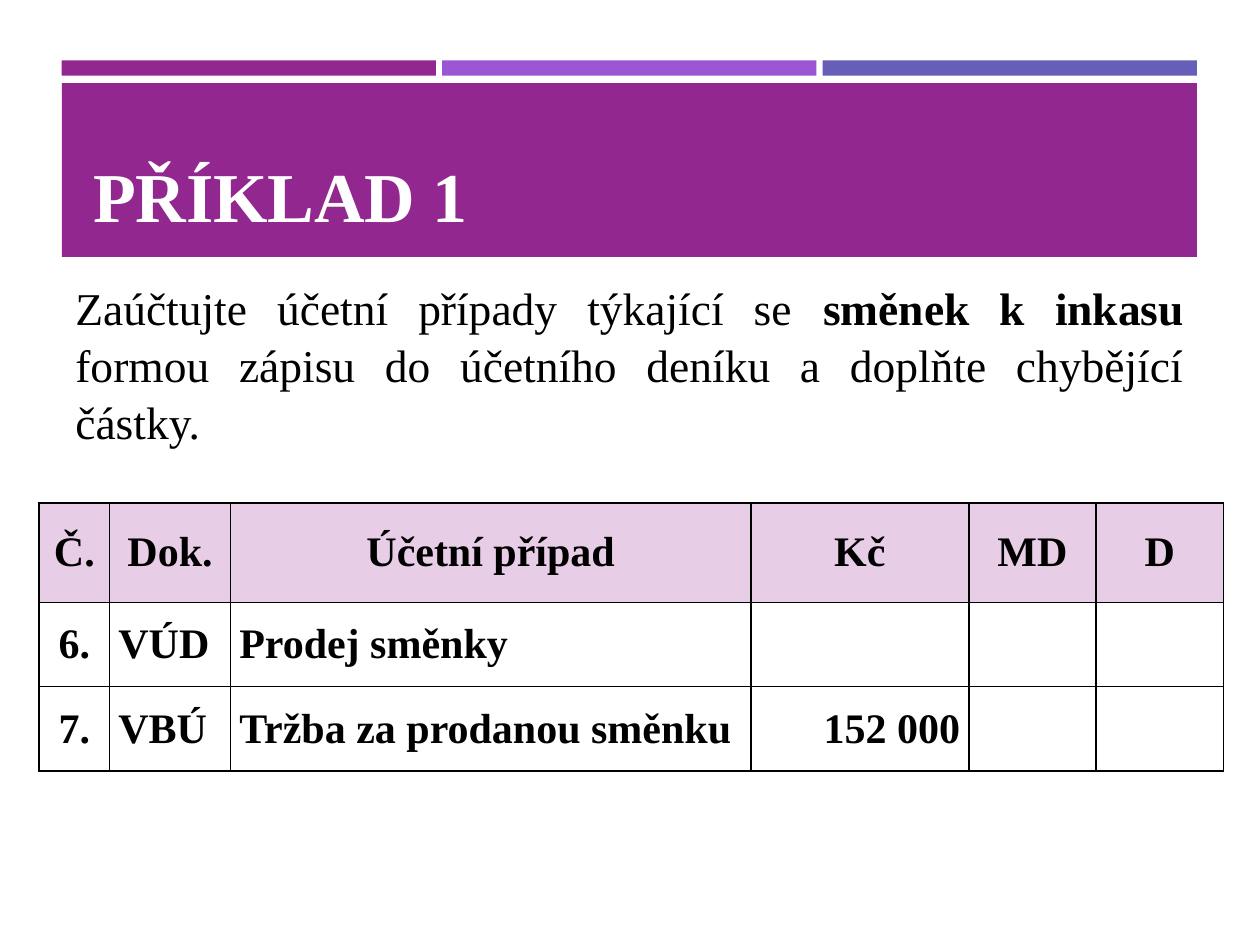
from dataclasses import dataclass
from lxml.etree import SubElement
from pptx import Presentation
from pptx.dml.color import RGBColor
from pptx.enum.shapes import MSO_SHAPE as Shape
from pptx.enum.text import MSO_ANCHOR as Anchor, PP_ALIGN as Align
from pptx.oxml.ns import qn
from pptx.slide import Slide
from pptx.util import Inches, Pt


def color(value):
    return RGBColor.from_string(value)


def grid(*units):
    return [Inches(unit / 10) for unit in units]


@dataclass
class SlideBuilder:
    slide: Slide
    font: str = "Times New Roman"
    ink: str = "000000"
    paper: str = "FFFFFF"
    purple: str = "92278F"
    violet: str = "9B57D3"
    indigo: str = "665EB8"
    header: str = "E8CDE7"

    def bar(self, box, fill):
        shape = self.slide.shapes.add_shape(Shape.RECTANGLE, *grid(*box))
        shape.shadow.inherit = False
        shape.fill.solid()
        shape.fill.fore_color.rgb = color(fill)
        shape.line.fill.background()

    def format_run(self, run, size, ink, bold):
        run.font.name = self.font
        run.font.size = Pt(size)
        run.font.bold = bold
        run.font.color.rgb = color(ink)

    def text(self, box, parts, size, ink, align, anchor=Anchor.TOP, spacing=1.0):
        shape = self.slide.shapes.add_textbox(*grid(*box))
        text_frame = shape.text_frame
        text_frame.word_wrap = True
        text_frame.vertical_anchor = anchor
        paragraph = text_frame.paragraphs[0]
        paragraph.alignment = align
        paragraph.line_spacing = spacing
        for words, bold in parts:
            run = paragraph.add_run()
            run.text = words
            self.format_run(run, size, ink, bold)

    def border(self, cell):
        properties = cell._tc.get_or_add_tcPr()
        for position, side in enumerate(("lnL", "lnR", "lnT", "lnB")):
            line = properties.makeelement(qn(f"a:{side}"), {"w": str(Pt(1))})
            properties.insert(position, line)
            fill = SubElement(line, qn("a:solidFill"))
            SubElement(fill, qn("a:srgbClr"), val=self.ink)

    def cell(self, cell, words, align, fill):
        cell.margin_left, cell.margin_right, cell.margin_top, cell.margin_bottom = grid(0.7, 0.7, 0, 0)
        cell.vertical_anchor = Anchor.MIDDLE
        if fill:
            cell.fill.solid()
            cell.fill.fore_color.rgb = color(fill)
        else:
            cell.fill.background()
        self.border(cell)
        if words:
            cell.text_frame.text = words
            paragraph = cell.text_frame.paragraphs[0]
            paragraph.alignment = align
            self.format_run(paragraph.runs[0], 24, self.ink, True)

    def table(self, left, top, widths, heights, rows, aligns):
        box = grid(left, top, sum(widths), sum(heights))
        table = self.slide.shapes.add_table(len(rows), len(widths), *box).table
        table.horz_banding = False
        for column, width in zip(table.columns, grid(*widths)):
            column.width = width
        for row, height in zip(table.rows, grid(*heights)):
            row.height = height
        for r, row in enumerate(rows):
            for c, words in enumerate(row):
                align = aligns[c] if r else Align.CENTER
                self.cell(table.cell(r, c), words, align, None if r else self.header)


def main():
    presentation = Presentation()
    presentation.slide_width, presentation.slide_height = grid(100, 75)
    builder = SlideBuilder(presentation.slides.add_slide(presentation.slide_layouts[6]))

    left, width, gap = 4.9, 90.1, 0.5
    bar_width = (width - 2 * gap) / 3
    for index, fill in enumerate((builder.purple, builder.violet, builder.indigo)):
        builder.bar((left + index * (bar_width + gap), 4.8, bar_width, 1.2), fill)
    builder.bar((left, 6.6, width, 13.8), builder.purple)

    builder.text((6.4, 7.5, 87.4, 11.8), [("PŘÍKLAD 1", True)], 40, builder.paper,
                 Align.LEFT, Anchor.BOTTOM)
    task = [
        ("Zaúčtujte účetní případy týkající se ", False),
        ("směnek k inkasu ", True),
        ("formou zápisu do účetního deníku a doplňte chybějící částky.", False),
    ]
    builder.text((5, 21.5, 90, 14.1), task, 26, builder.ink, Align.JUSTIFY, spacing=1.05)

    entries = [
        ("Č.", "Dok.", "Účetní případ", "Kč", "MD", "D"),
        ("6.", "VÚD", "Prodej směnky", "", "", ""),
        ("7.", "VBÚ", "Tržba za prodanou směnku", "152 000", "", ""),
    ]
    aligns = (Align.CENTER, Align.LEFT, Align.LEFT, Align.RIGHT, Align.CENTER, Align.CENTER)
    builder.table(3.1, 39.9, (5.6, 9.6, 41.3, 17.3, 10.1, 10.1), (7.9, 6.7, 6.7), entries, aligns)

    presentation.save("out.pptx")


if __name__ == "__main__":
    main()
